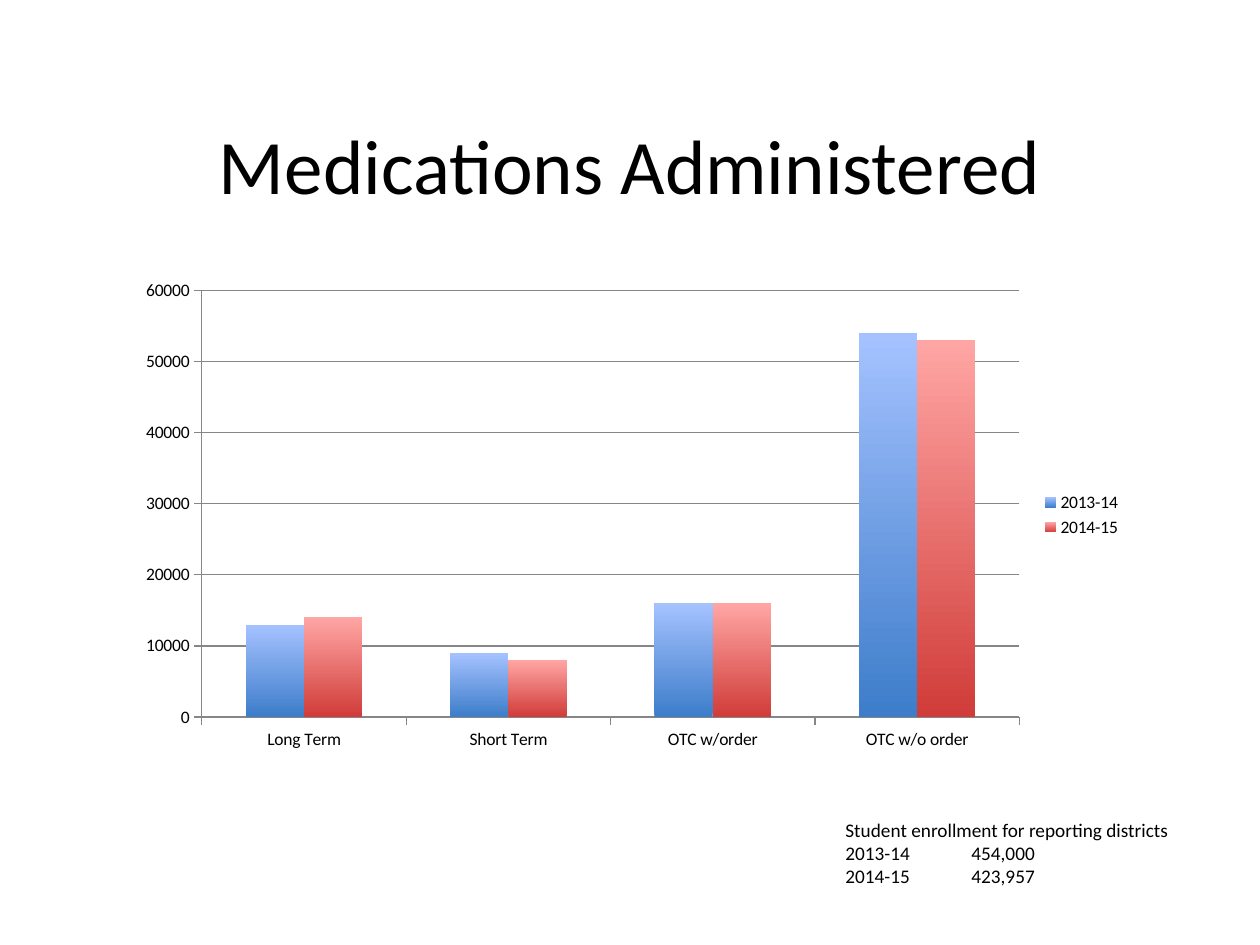
from dataclasses import dataclass

from pptx import Presentation
from pptx.chart.data import CategoryChartData
from pptx.dml.color import RGBColor
from pptx.enum.chart import XL_CHART_TYPE, XL_LEGEND_POSITION, XL_TICK_MARK
from pptx.enum.text import MSO_ANCHOR, MSO_AUTO_SIZE, PP_ALIGN
from pptx.util import Emu, Pt

# Content
TITLE = "Medications Administered"
CATEGORIES = ["Long Term", "Short Term", "OTC w/order", "OTC w/o order"]
SERIES = {
    "2013-14": (13000, 9000, 16000, 54000),
    "2014-15": (14000, 8000, 16000, 53000),
}
ENROLLMENT = [
    "Student enrollment for reporting districts",
    "2013-14\t454,000",
    "2014-15\t423,957",
]

# Places in px: left, top, width, height
PAGE_SIZE = (1260, 945)
TITLE_BOX = (126, 84, 1008, 159)
CHART_BOX = (126, 271, 1008, 488)
NOTE_BOX = (833, 812, 370, 83)


@dataclass(frozen=True)
class Theme:
    font: str = "Calibri"
    text: str = "000000"
    line: str = "868686"
    bars: tuple = (("3D7DCA", "A5C2FF"), ("D03C39", "FFA6A4"))  # bottom, top
    title_size: int = 44
    chart_size: int = 10
    note_size: int = 11


THEME = Theme()


def px(*lengths):
    return [Emu(length * 914400 // 126) for length in lengths]


def color(value):
    return RGBColor.from_string(value)


def style_font(font, size):
    font.name = THEME.font
    font.size = Pt(size)
    font.color.rgb = color(THEME.text)


def add_title(page):
    title = page.shapes.title
    title.left, title.top, title.width, title.height = px(*TITLE_BOX)
    title.text_frame.text = TITLE
    title.text_frame.vertical_anchor = MSO_ANCHOR.MIDDLE
    para = title.text_frame.paragraphs[0]
    para.alignment = PP_ALIGN.CENTER
    style_font(para.font, THEME.title_size)


def add_medication_chart(page):
    data = CategoryChartData()
    data.categories = CATEGORIES
    for name, values in SERIES.items():
        data.add_series(name, values)
    chart = page.shapes.add_chart(
        XL_CHART_TYPE.COLUMN_CLUSTERED, *px(*CHART_BOX), data).chart
    style_font(chart.font, THEME.chart_size)
    chart.has_title = False
    chart.has_legend = True
    chart.legend.position = XL_LEGEND_POSITION.RIGHT
    chart.legend.include_in_layout = False

    # Axes and gridlines
    scale = chart.value_axis
    scale.minimum_scale, scale.maximum_scale, scale.major_unit = 0, 60000, 10000
    scale.has_major_gridlines = True
    for axis in (chart.category_axis, scale):
        axis.major_tick_mark = XL_TICK_MARK.OUTSIDE
        axis.minor_tick_mark = XL_TICK_MARK.NONE
    for part in (chart.category_axis, scale, scale.major_gridlines):
        part.format.line.color.rgb = color(THEME.line)
        part.format.line.width = Pt(0.75)

    # Bars, shaded from bottom to top
    plot = chart.plots[0]
    plot.vary_by_categories = False
    plot.gap_width = 150
    plot.overlap = 0
    for series, shades in zip(plot.series, THEME.bars):
        fill = series.format.fill
        fill.gradient()
        fill.gradient_angle = 90
        for stop, shade in zip(fill.gradient_stops, shades):
            stop.color.rgb = color(shade)


def add_enrollment_note(page):
    frame = page.shapes.add_textbox(*px(*NOTE_BOX)).text_frame
    frame.word_wrap = False
    frame.auto_size = MSO_AUTO_SIZE.SHAPE_TO_FIT_TEXT
    frame.text = "\n".join(ENROLLMENT)
    for para in frame.paragraphs:
        style_font(para.font, THEME.note_size)


def main():
    deck = Presentation()
    deck.slide_width, deck.slide_height = px(*PAGE_SIZE)
    page = deck.slides.add_slide(deck.slide_layouts.get_by_name("Title Only"))
    add_title(page)
    add_medication_chart(page)
    add_enrollment_note(page)
    deck.save("out.pptx")


if __name__ == "__main__":
    main()
